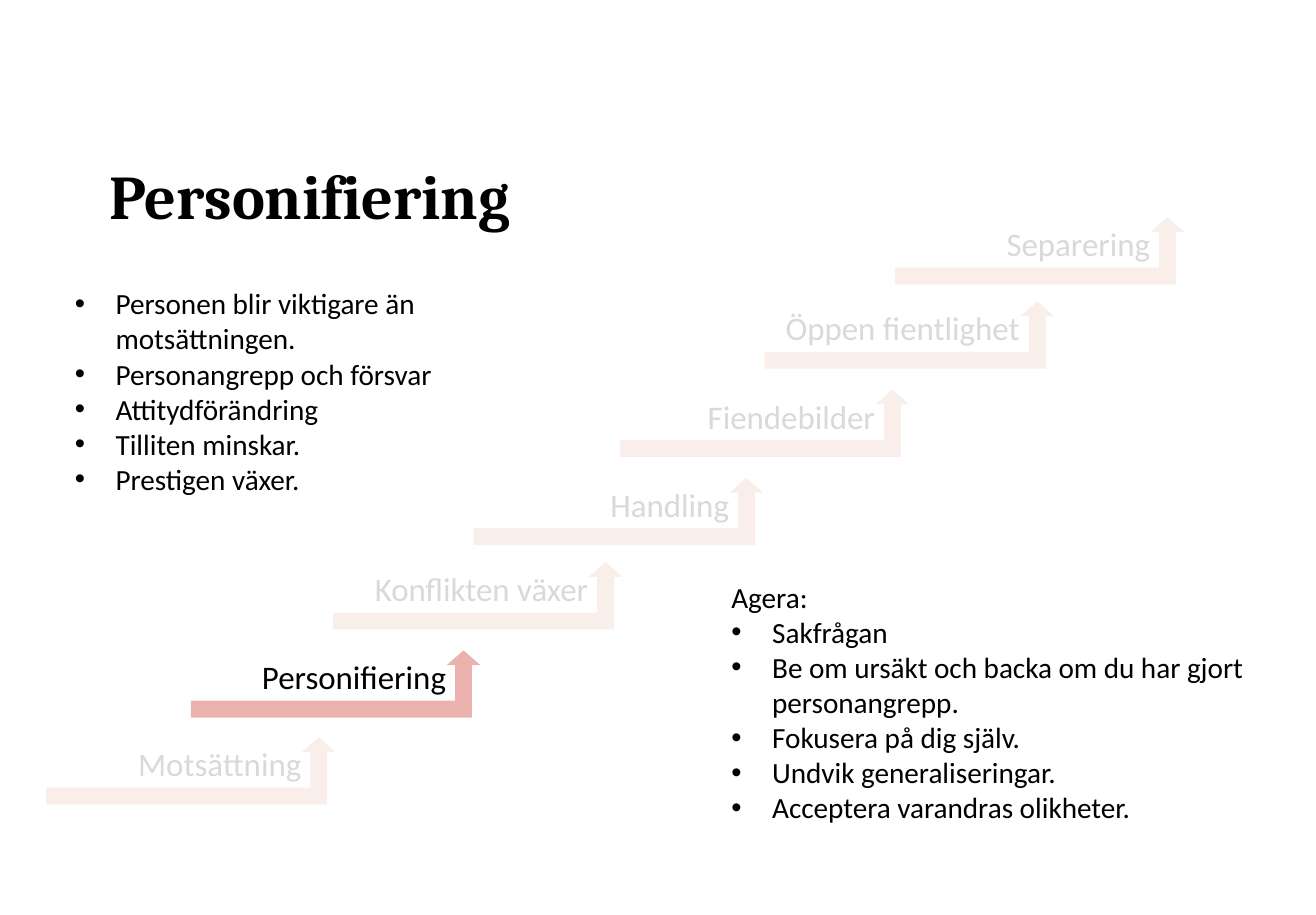
from lxml import etree
from pptx import Presentation
from pptx.dml.color import RGBColor
from pptx.enum import shapes, text
from pptx.oxml.ns import qn
from pptx.util import Inches, Pt

BLACK = RGBColor(0x00, 0x00, 0x00)
GREY = RGBColor(0xD9, 0xD9, 0xD9)
PALE = RGBColor(0xF9, 0xEE, 0xE9)
ROSE = RGBColor(0xEA, 0xB1, 0xAD)


def style(para, size, color, face="Calibri"):
    for run in para.runs:
        run.font.name = face
        run.font.size = Pt(size)
        run.font.color.rgb = color


def add_list(left, top, width, height, lines, head=None):
    box = slide.shapes.add_textbox(Inches(left), Inches(top), Inches(width), Inches(height))
    frame = box.text_frame
    frame.word_wrap = True
    frame.text = "\n".join(([head] if head else []) + lines)
    for para in frame.paragraphs:
        if para.text != head:
            props = para._p.get_or_add_pPr()
            props.set("marL", str(Inches(0.31)))
            props.set("indent", str(Inches(-0.31)))
            etree.SubElement(props, qn("a:buFont")).set("typeface", "Arial")
            etree.SubElement(props, qn("a:buChar")).set("char", "•")
        style(para, 16, BLACK)


deck = Presentation()
deck.slide_width = Inches(10)
deck.slide_height = Inches(6.95)
slide = deck.slides.add_slide(deck.slide_layouts[5])

title = slide.shapes.title
title.left, title.top = Inches(0.83), Inches(0.84)
title.width, title.height = Inches(4.7), Inches(1.35)
frame = title.text_frame
frame.text = "Personifiering"
frame.margin_left = frame.margin_right = frame.margin_top = frame.margin_bottom = 0
frame.vertical_anchor = text.MSO_ANCHOR.MIDDLE
para = frame.paragraphs[0]
para.alignment = text.PP_ALIGN.LEFT
para.line_spacing = 0.9
style(para, 34, BLACK, "Cambria")
para.runs[0].font.bold = True

steps = [
    ("Motsättning", 0.35, 5.6),
    ("Personifiering", 1.45, 4.94),
    ("Konflikten växer", 2.53, 4.27),
    ("Handling", 3.6, 3.63),
    ("Fiendebilder", 4.71, 2.96),
    ("Öppen fientlighet", 5.81, 2.29),
    ("Separering", 6.8, 1.65),
]
for name, left, top in steps:
    active = name == title.text_frame.text
    label = slide.shapes.add_textbox(Inches(left - 0.15), Inches(top), Inches(2.09), Inches(0.4))
    frame = label.text_frame
    frame.word_wrap = True
    frame.margin_right = 0
    frame.text = name
    para = frame.paragraphs[0]
    para.alignment = text.PP_ALIGN.RIGHT
    style(para, 18, BLACK if active else GREY)

    arrow = slide.shapes.add_shape(
        shapes.MSO_SHAPE.BENT_UP_ARROW, Inches(left), Inches(top), Inches(2.2), Inches(0.51))
    arrow.adjustments[2] = 0.22
    arrow.shadow.inherit = False
    arrow.fill.solid()
    arrow.fill.fore_color.rgb = ROSE if active else PALE
    arrow.line.fill.background()

add_list(0.47, 2.12, 3.52, 1.72, [
    "Personen blir viktigare än motsättningen.",
    "Personangrepp och försvar",
    "Attitydförändring",
    "Tilliten minskar.",
    "Prestigen växer.",
])
add_list(5.46, 4.35, 4.33, 1.99, [
    "Sakfrågan",
    "Be om ursäkt och backa om du har gjort personangrepp.",
    "Fokusera på dig själv.",
    "Undvik generaliseringar.",
    "Acceptera varandras olikheter.",
], "Agera:")

deck.save("out.pptx")
